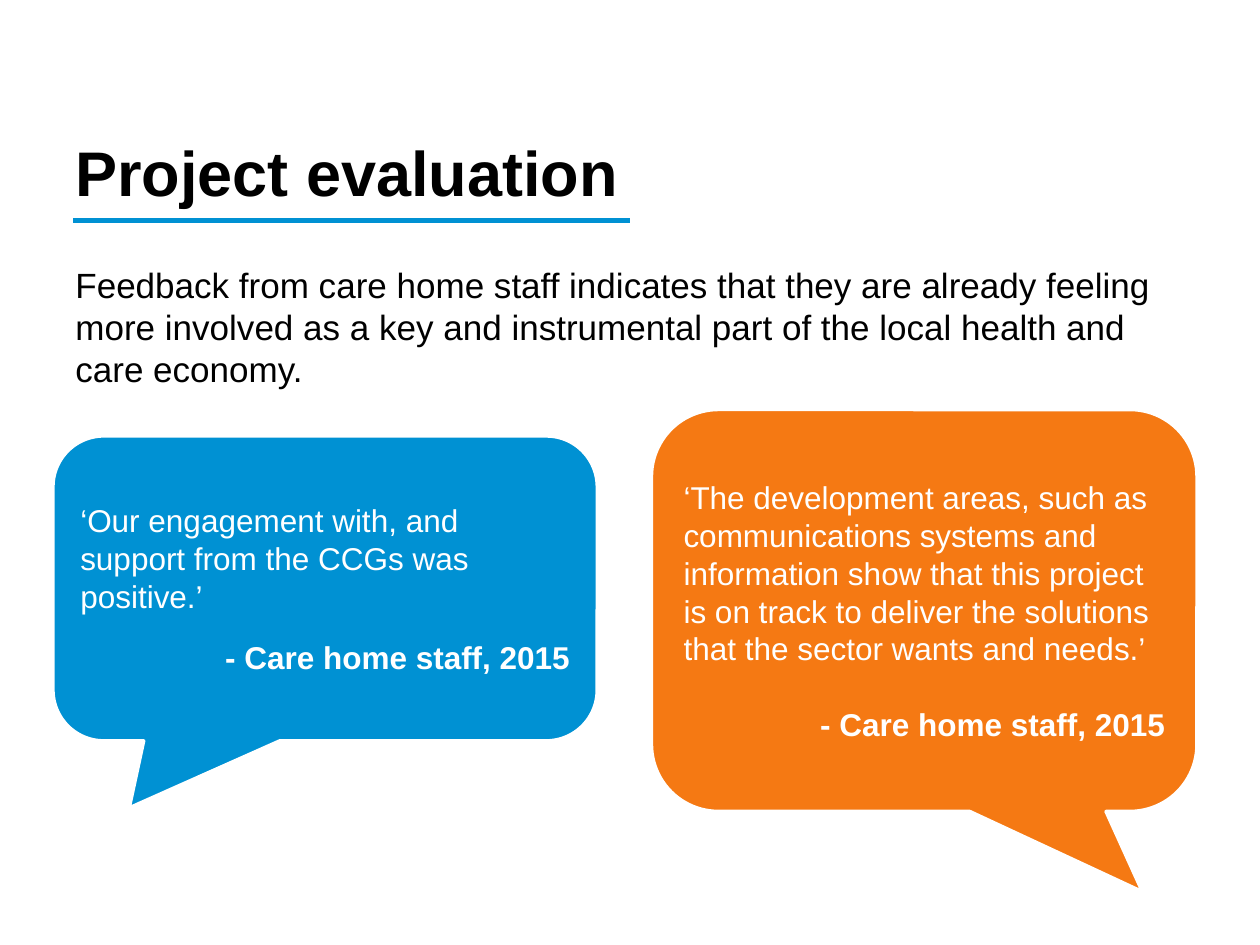
from lxml import etree
from pptx import Presentation
from pptx.dml.color import RGBColor
from pptx.enum.shapes import MSO_CONNECTOR, MSO_SHAPE
from pptx.enum.text import MSO_ANCHOR, PP_ALIGN
from pptx.oxml.ns import qn
from pptx.util import Pt

CALL = MSO_SHAPE.ROUNDED_RECTANGULAR_CALLOUT
LINE = MSO_CONNECTOR.STRAIGHT
MID = MSO_ANCHOR.MIDDLE
TOP = MSO_ANCHOR.TOP
LEFT = PP_ALIGN.LEFT
RIGHT = PP_ALIGN.RIGHT
HUES = {"black": "000000", "white": "FFFFFF", "blue": "0091D3", "orange": "F57913"}


def hue(name):
    return RGBColor.from_string(HUES[name])


def write(para, text, size, tone, bold=False, align=LEFT):
    para.text = text
    para.alignment = align
    para.font.name = "Arial"
    para.font.size = Pt(size)
    para.font.bold = bold
    para.font.color.rgb = hue(tone)


deck = Presentation()
deck.slide_width, deck.slide_height = Pt(720), Pt(540)
slide = deck.slides.add_slide(deck.slide_layouts[6])
shapes = slide.shapes

lead = ("Feedback from care home staff indicates that they are already feeling more "
        "involved as a key and instrumental part of the local health and care economy.")
texts = [
    (lead, (36, 146.88, 630, 149.76), 20, False, TOP),
    ("Project evaluation", (36, 51.84, 648, 92.16), 36, True, MID),
]
for text, spot, size, bold, anchor in texts:
    box = shapes.add_textbox(*map(Pt, spot))
    frame = box.text_frame
    frame.word_wrap = True
    frame.vertical_anchor = anchor
    write(frame.paragraphs[0], text, size, "black", bold)

quotes = [
    ("‘Our engagement with, and support from the CCGs was positive.’",
     (98.64, 180.72, 174.24, 311.04), (0.72, 0.36), "blue", 13),
    ("‘The development areas, such as communications systems and information show "
     "that this project is on track to deliver the solutions that the sector wants "
     "and needs.’",
     (413.28, 192.96, 229.68, 311.76), (0.7, -0.4), "orange", 21.5),
]
for quote, spot, tip, tone, gap in quotes:
    call = shapes.add_shape(CALL, *map(Pt, spot))
    call.rotation = 90
    call.adjustments[0], call.adjustments[1] = tip
    call.shadow.inherit = False
    call.fill.solid()
    call.fill.fore_color.rgb = hue(tone)
    call.line.color.rgb = hue("white")
    call.line.width = Pt(2)
    frame = call.text_frame
    frame.word_wrap = True
    frame.vertical_anchor = MID
    frame._txBody.bodyPr.set("vert", "vert270")
    write(frame.paragraphs[0], quote, 18, "white")
    source = frame.add_paragraph()
    write(source, "- Care home staff, 2015", 18, "white", True, RIGHT)
    source.space_before = Pt(gap)

rule = shapes.add_connector(LINE, Pt(41.76), Pt(126), Pt(360), Pt(126))
rule.line.color.rgb = hue("blue")
rule.line.width = Pt(3)
etree.SubElement(rule._element.spPr, qn("a:effectLst"))

deck.save("out.pptx")
